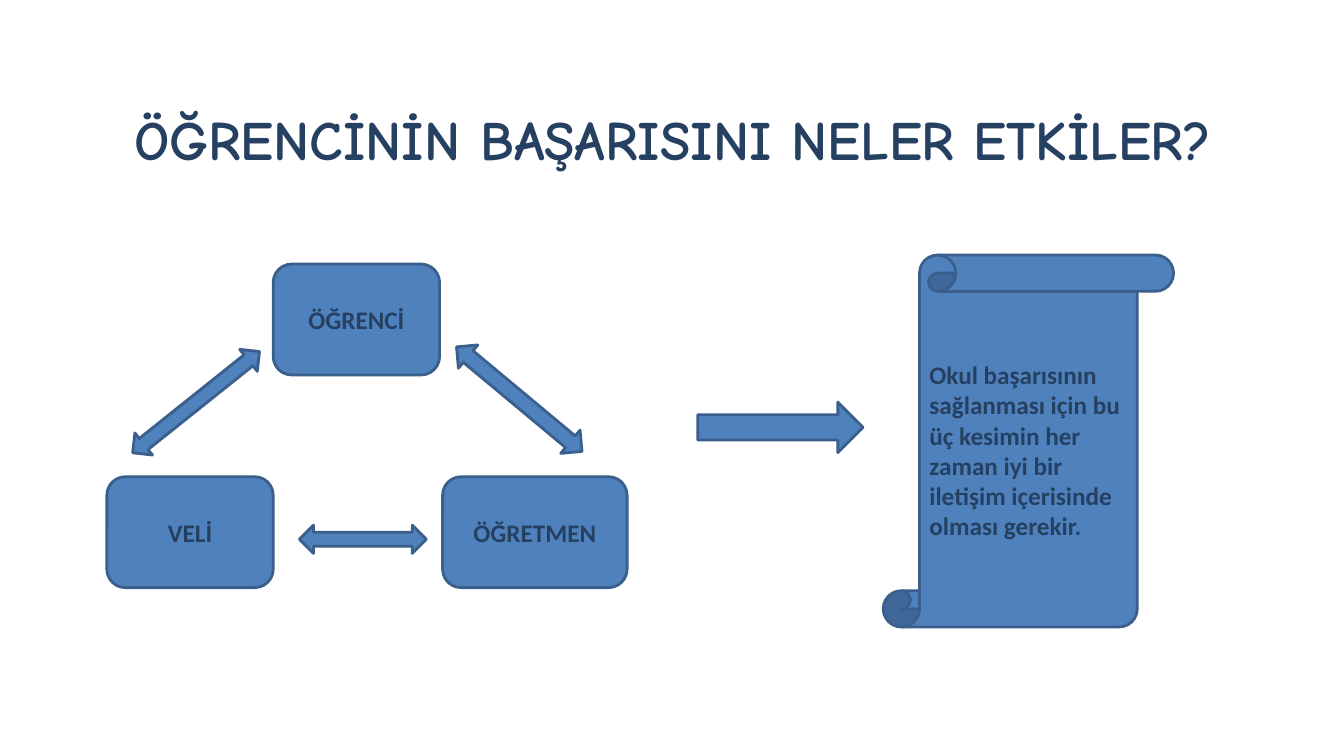
from pptx import Presentation
from pptx.dml.color import RGBColor
from pptx.enum.shapes import MSO_SHAPE as SHAPE
from pptx.enum.text import MSO_ANCHOR as ANCHOR, PP_ALIGN as ALIGN
from pptx.util import Inches, Pt

NAVY = RGBColor(0x25, 0x40, 0x61)
BLUE = RGBColor(0x4F, 0x81, 0xBD)
OUTLINE = RGBColor(0x3A, 0x5F, 0x8C)


def add_figure(preset, left, top, width, height, rotation=0):
    figure = slide.shapes.add_shape(
        preset, Inches(left), Inches(top), Inches(width), Inches(height))
    figure.rotation = rotation
    figure.shadow.inherit = False
    figure.fill.solid()
    figure.fill.fore_color.rgb = BLUE
    figure.line.color.rgb = OUTLINE
    figure.line.width = Pt(2)
    return figure


def write(figure, text, align, size=18, font_name="Calibri"):
    frame = figure.text_frame
    frame.word_wrap = True
    frame.vertical_anchor = ANCHOR.MIDDLE
    frame.text = text
    paragraph = frame.paragraphs[0]
    paragraph.alignment = align
    paragraph.font.name = font_name
    paragraph.font.size = Pt(size)
    paragraph.font.bold = True
    paragraph.font.color.rgb = NAVY


presentation = Presentation()
presentation.slide_width = Inches(13.33)
presentation.slide_height = Inches(7.5)
slide = presentation.slides.add_slide(presentation.slide_layouts[5])

title = slide.shapes.title
title.left, title.top = Inches(0.92), Inches(0.65)
title.width, title.height = Inches(11.5), Inches(1.45)
write(title, "ÖĞRENCİNİN BAŞARISINI NELER ETKİLER?", ALIGN.CENTER, 39.6, "Comic Neue")

for role, left, top, width in [
    ("ÖĞRENCİ", 2.71, 2.62, 1.65),
    ("VELİ", 1.06, 4.73, 1.65),
    ("ÖĞRETMEN", 4.39, 4.73, 1.83),
]:
    role_box = add_figure(SHAPE.ROUNDED_RECTANGLE, left, top, width, 1.1)
    write(role_box, role, ALIGN.CENTER)

conclusion = add_figure(SHAPE.VERTICAL_SCROLL, 8.76, 2.53, 2.88, 3.69)
write(
    conclusion,
    "Okul başarısının sağlanması için bu üç kesimin her zaman iyi bir "
    "iletişim içerisinde olması gerekir.",
    ALIGN.LEFT,
)

for left, top, width, height, rotation in [
    (1.14, 3.85, 1.61, 0.28, 321.4),
    (4.34, 3.81, 1.62, 0.3, 39.8),
    (2.97, 5.21, 1.26, 0.28, 0),
]:
    add_figure(SHAPE.LEFT_RIGHT_ARROW, left, top, width, height, rotation)

add_figure(SHAPE.RIGHT_ARROW, 6.92, 3.99, 1.64, 0.5)

presentation.save("out.pptx")
